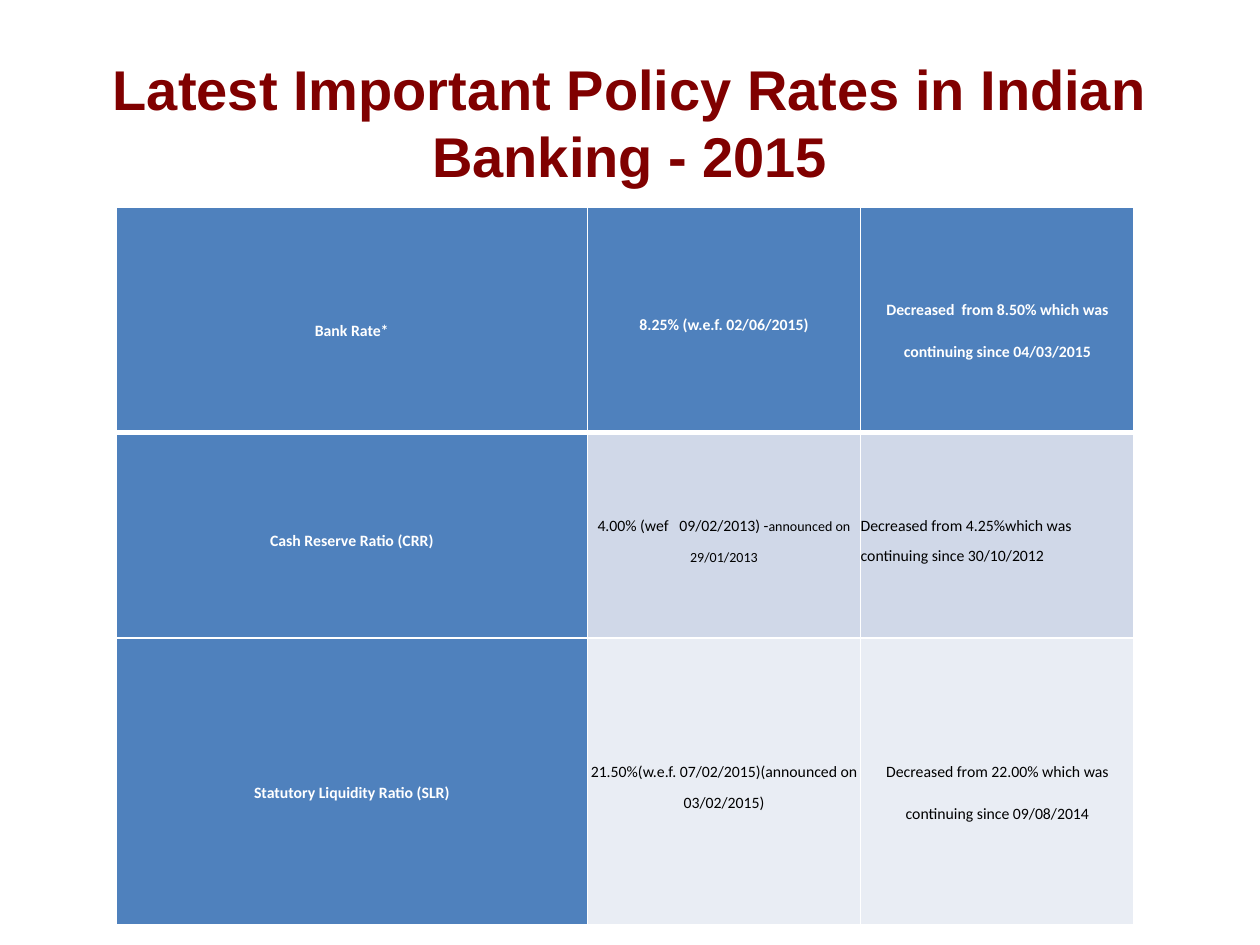
from dataclasses import dataclass

from lxml import etree
from pptx import Presentation
from pptx.dml.color import RGBColor
from pptx.enum.text import MSO_ANCHOR, PP_ALIGN
from pptx.oxml.ns import qn
from pptx.util import Cm, Pt

MIDDLE = MSO_ANCHOR.MIDDLE
CENTER = PP_ALIGN.CENTER
LEFT = PP_ALIGN.LEFT

MAROON = RGBColor(0x80, 0x00, 0x00)
BLUE = RGBColor(0x4F, 0x81, 0xBD)
BAND_DARK = RGBColor(0xD0, 0xD8, 0xE8)
BAND_LIGHT = RGBColor(0xE9, 0xED, 0xF4)
WHITE = RGBColor(0xFF, 0xFF, 0xFF)
BLACK = RGBColor(0x00, 0x00, 0x00)

TIGHT = Pt(17.6)
LOOSE = Pt(24.1)
COLUMN_WIDTHS = (Cm(9.5), Cm(5.51), Cm(5.51))


@dataclass(frozen=True)
class Entry:
    text: str
    spacing: int = TIGHT
    align: PP_ALIGN = CENTER
    small_text: str = ""


@dataclass(frozen=True)
class RateRow:
    height: int
    band: RGBColor
    entries: tuple[Entry, Entry, Entry]


RATES = (
    RateRow(Cm(4.55), BLUE, (
        Entry("Bank Rate*", LOOSE),
        Entry("8.25% (w.e.f. 02/06/2015)"),
        Entry("Decreased  from 8.50% which was continuing since 04/03/2015", LOOSE),
    )),
    RateRow(Cm(4.14), BAND_DARK, (
        Entry("Cash Reserve Ratio (CRR)"),
        Entry("4.00% (wef   09/02/2013) -", small_text="announced on 29/01/2013"),
        Entry("Decreased from 4.25%which was continuing since 30/10/2012", align=LEFT),
    )),
    RateRow(Cm(5.79), BAND_LIGHT, (
        Entry("Statutory Liquidity Ratio (SLR)", LOOSE),
        Entry("21.50%(w.e.f. 07/02/2015)(announced on 03/02/2015)"),
        Entry("Decreased from 22.00% which was continuing since 09/08/2014", LOOSE),
    )),
)


def set_borders(cell, top: int, bottom: int) -> None:
    properties = cell._tc.get_or_add_tcPr()
    widths = {"a:lnL": Pt(1), "a:lnR": Pt(1), "a:lnT": top, "a:lnB": bottom}
    for position, (side, width) in enumerate(widths.items()):
        line = etree.Element(qn(side), w=str(int(width)))
        fill = etree.SubElement(line, qn("a:solidFill"))
        etree.SubElement(fill, qn("a:srgbClr"), val=str(WHITE))
        properties.insert(position, line)


def fill_cell(cell, entry: Entry, background: RGBColor, is_heading: bool) -> None:
    cell.fill.solid()
    cell.fill.fore_color.rgb = background
    cell.vertical_anchor = MIDDLE
    cell.margin_left = cell.margin_right = cell.margin_top = cell.margin_bottom = 0
    paragraph = cell.text_frame.paragraphs[0]
    paragraph.alignment = entry.align
    paragraph.line_spacing = entry.spacing
    paragraph.font.name = "Calibri"
    paragraph.font.size = Pt(9)
    paragraph.font.bold = is_heading
    paragraph.font.color.rgb = WHITE if is_heading else BLACK
    paragraph.add_run().text = entry.text
    if entry.small_text:
        small_run = paragraph.add_run()
        small_run.text = entry.small_text
        small_run.font.size = Pt(8)


def add_title(slide, text: str) -> None:
    frame = slide.shapes.add_textbox(Cm(1.27), Cm(0.76), Cm(22.86), Cm(3.4)).text_frame
    frame.word_wrap = True
    frame.vertical_anchor = MIDDLE
    paragraph = frame.paragraphs[0]
    paragraph.text = text
    paragraph.alignment = CENTER
    paragraph.font.name = "Arial"
    paragraph.font.size = Pt(32)
    paragraph.font.bold = True
    paragraph.font.color.rgb = MAROON


def add_rates_table(slide, rates: tuple[RateRow, ...]) -> None:
    table = slide.shapes.add_table(
        len(rates), len(COLUMN_WIDTHS), Cm(2.34), Cm(4.17),
        sum(COLUMN_WIDTHS), sum(rate.height for rate in rates),
    ).table
    for column, width in zip(table.columns, COLUMN_WIDTHS):
        column.width = width
    for row_index, rate in enumerate(rates):
        table.rows[row_index].height = rate.height
        for column_index, entry in enumerate(rate.entries):
            cell = table.cell(row_index, column_index)
            is_heading = row_index == 0 or column_index == 0
            fill_cell(cell, entry, BLUE if is_heading else rate.band, is_heading)
            set_borders(
                cell,
                top=Pt(3 if row_index == 1 else 1),
                bottom=Pt(3 if row_index == 0 else 1),
            )


def main() -> None:
    presentation = Presentation()
    presentation.slide_width = Cm(25.4)
    presentation.slide_height = Cm(19.05)
    slide = presentation.slides.add_slide(presentation.slide_layouts[6])
    add_title(slide, "Latest Important Policy Rates in Indian Banking - 2015")
    add_rates_table(slide, RATES)
    presentation.save("out.pptx")


if __name__ == "__main__":
    main()
